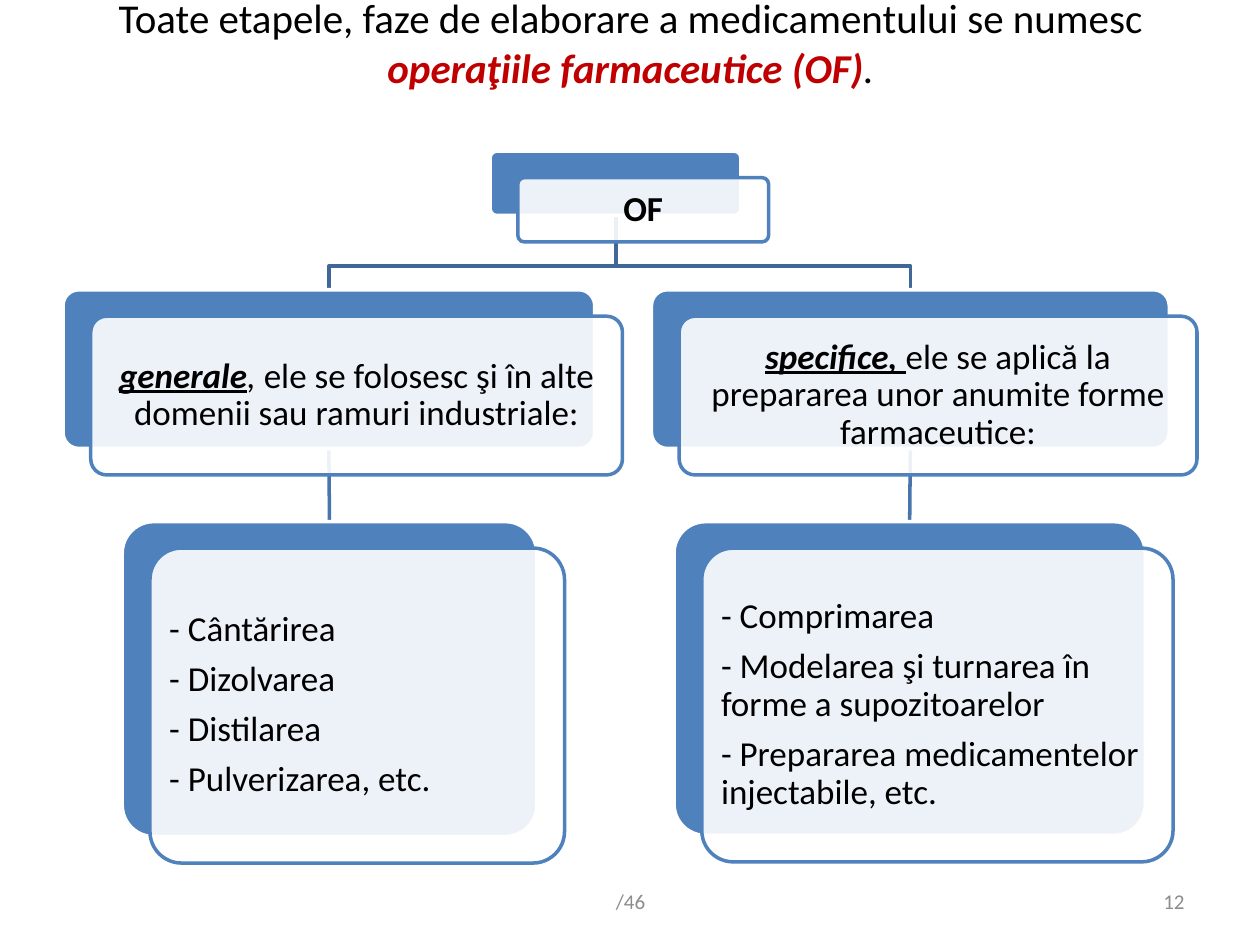
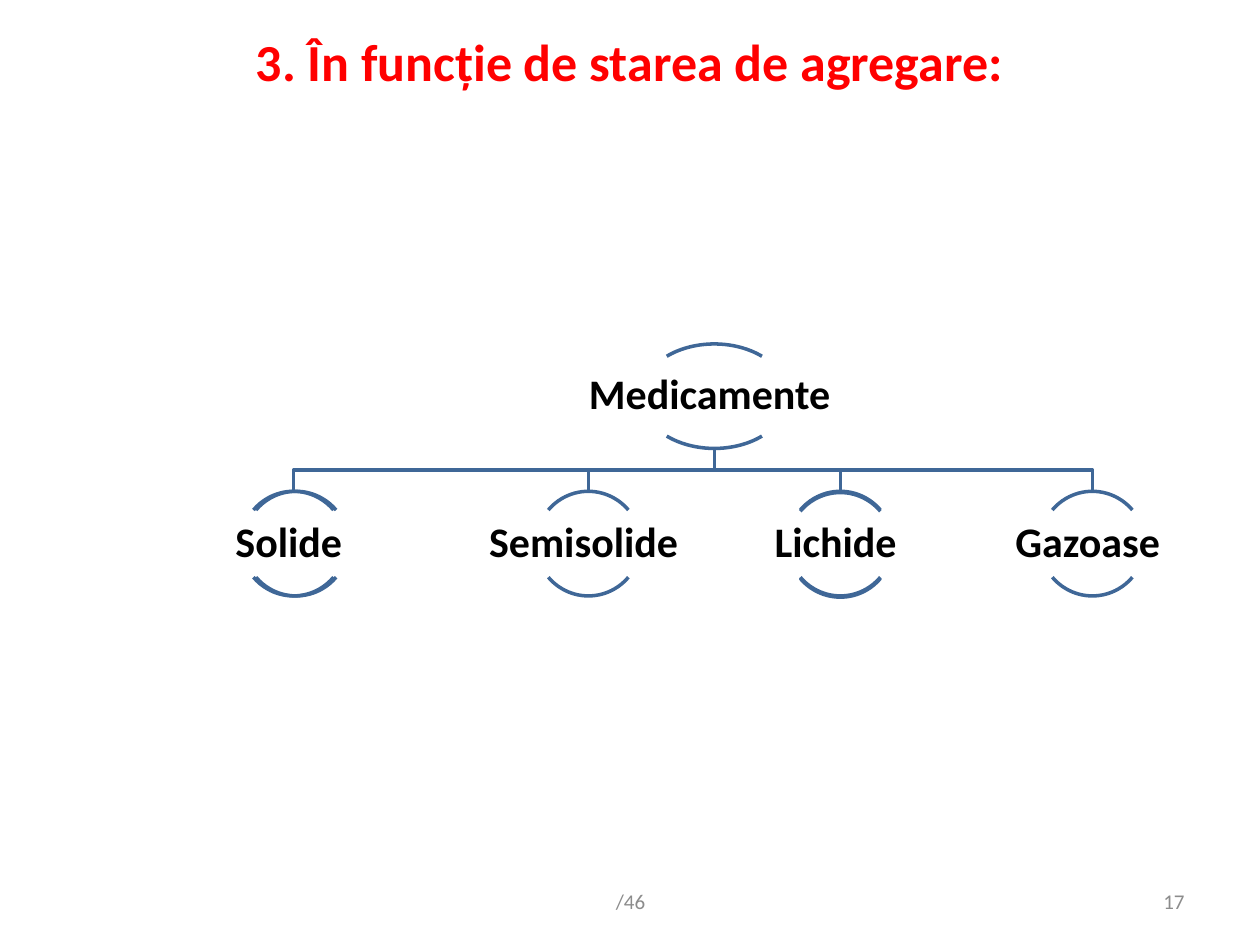
"""Build two slides on pharmaceutical operations and states of aggregation."""
from dataclasses import dataclass

from lxml.etree import SubElement
from pptx import Presentation
from pptx.dml.color import RGBColor
from pptx.enum.shapes import MSO_CONNECTOR, MSO_SHAPE
from pptx.enum.text import MSO_ANCHOR, MSO_AUTO_SIZE, PP_ALIGN
from pptx.oxml.ns import qn
from pptx.util import Inches, Pt


@dataclass(frozen=True)
class Theme:
    """Colours, font and type sizes of the deck."""
    font: str = "Calibri"
    ink: str = "000000"
    white: str = "FFFFFF"
    blue: str = "4F81BD"
    branch: str = "3F6797"
    link: str = "4875AC"
    accent: str = "C00000"
    heading: str = "FF0000"
    muted: str = "8C8C8C"
    statement_size: float = 23.4
    heading_size: float = 29.7
    card_size: float = 20
    node_size: float = 24
    footer_size: float = 12
    line_width: float = 2


class SlideBuilder:
    """Hold the theme and the current slide, and draw each kind of element."""

    def __init__(self, deck, theme):
        self.deck = deck
        self.theme = theme
        self.page = None

    def start_page(self, number):
        self.page = self.deck.slides.add_slide(self.deck.slide_layouts[5])
        self.label((7.17, 6.95, 2.33, 0.4), number, PP_ALIGN.RIGHT)
        self.label((3.42, 6.95, 3.17, 0.4), "/46", PP_ALIGN.CENTER)

    def set_text(self, box, paras, size, align, inset=None, color=None, spacing=None):
        frame = box.text_frame
        settings = {"word_wrap": True, "auto_size": MSO_AUTO_SIZE.NONE,
                    "vertical_anchor": MSO_ANCHOR.MIDDLE}
        if inset is not None:
            for side in ("left", "top", "right", "bottom"):
                settings[f"margin_{side}"] = Inches(inset)
        for name, value in settings.items():
            setattr(frame, name, value)
        for index, spans in enumerate(paras):
            para = frame.add_paragraph() if index else frame.paragraphs[0]
            for name, value in {"alignment": align, **(spacing or {})}.items():
                setattr(para, name, value)
            for text, style in spans:
                if text == "\v":
                    para.add_line_break()
                    continue
                span = para.add_run()
                span.text = text
                values = {"name": self.theme.font, "size": Pt(size), "bold": False, **style}
                tint = values.pop("tint", color or self.theme.ink)
                for name, value in values.items():
                    setattr(span.font, name, value)
                span.font.color.rgb = RGBColor.from_string(tint)

    def title(self, place, spans, size):
        box = self.page.shapes.title
        for name, value in zip(("left", "top", "width", "height"), place):
            setattr(box, name, Inches(value))
        self.set_text(box, [spans], size, PP_ALIGN.CENTER)

    def label(self, place, text, align):
        box = self.page.shapes.add_textbox(*map(Inches, place))
        self.set_text(box, [[(text, {})]], self.theme.footer_size, align,
                      color=self.theme.muted)

    def outline(self, shape, color):
        shape.line.color.rgb = RGBColor.from_string(color)
        shape.line.width = Pt(self.theme.line_width)

    def shape(self, kind, place, adjustments, fill, line):
        box = self.page.shapes.add_shape(kind, *map(Inches, place))
        box.shadow.inherit = False
        for index, value in enumerate(adjustments):
            box.adjustments[index] = value
        if fill:
            box.fill.solid()
            box.fill.fore_color.rgb = RGBColor.from_string(fill)
        else:
            box.fill.background()
        self.outline(box, line)
        return box

    def card(self, place, paras, align=PP_ALIGN.CENTER):
        left, top, width, height = place
        theme = self.theme
        back = self.shape(MSO_SHAPE.ROUNDED_RECTANGLE, place, [0.1], theme.blue, theme.white)
        front = self.shape(MSO_SHAPE.ROUNDED_RECTANGLE, (left + 0.22, top + 0.21, width, height),
                           [0.1], theme.white, theme.blue)
        color = front._element.spPr.find(qn("a:solidFill")).find(qn("a:srgbClr"))
        SubElement(color, qn("a:alpha"), val="90000")
        self.set_text(front, paras, theme.card_size, align, inset=0.08,
                      spacing={"line_spacing": 0.9, "space_after": Pt(7)})
        return back

    def branch(self, start, bend, end):
        points = [start, (start[0], bend), (end[0], bend), end]
        points = [tuple(map(Inches, point)) for point in points]
        builder = self.page.shapes.build_freeform(*points[0])
        builder.add_line_segments(points[1:], close=False)
        line = builder.convert_to_shape()
        line.shadow.inherit = False
        line.fill.background()
        self.outline(line, self.theme.branch)

    def link(self, upper, lower):
        line = self.page.shapes.add_connector(MSO_CONNECTOR.STRAIGHT, 0, 0, 0, 0)
        line.begin_connect(upper, 2)
        line.end_connect(lower, 0)
        self.outline(line, self.theme.link)
        SubElement(line._element.spPr, qn("a:effectLst"))
        self.page.shapes._spTree.insert(2, line._element)

    def arcs(self, center, top, width):
        for angles in ([132, 192], [24, 84]):
            self.shape(MSO_SHAPE.ARC, (center - width / 2, top, width, 0.83), angles,
                       None, self.theme.branch)

    def node(self, center, top, width, text, text_width):
        self.arcs(center, top, width)
        box = self.page.shapes.add_textbox(Inches(center - text_width / 2), Inches(top + 0.15),
                                           Inches(text_width), Inches(0.53))
        self.set_text(box, [[(text, {"bold": True})]], self.theme.node_size, PP_ALIGN.CENTER,
                      inset=0.02, spacing={"line_spacing": 0.9})


def draw_operations(builder):
    theme = builder.theme
    strong = {"bold": True, "italic": True}
    keyword = {**strong, "underline": True}
    groups = [
        ((0.5, 2.3, 4.22, 1.26),
         [("generale", keyword), (", ", {"italic": True}),
          ("ele se folosesc şi în alte domenii sau ramuri industriale:", {})],
         (0.97, 4.14, 3.29, 2.5),
         ["- Cântărirea", "- Dizolvarea", "- Distilarea", "- Pulverizarea, etc."]),
        ((5.17, 2.3, 4.11, 1.26),
         [("specifice, ", keyword),
          ("ele se aplică la prepararea unor anumite forme farmaceutice:", {})],
         (5.35, 4.14, 3.74, 2.49),
         ["- Comprimarea", "- Modelarea şi turnarea în forme a supozitoarelor",
          "- Prepararea medicamentelor injectabile, etc."]),
    ]
    builder.start_page("12")
    builder.title((0.2, -0.09, 9.61, 0.85), [
        ("Toate etapele, faze de elaborare a medicamentului se numesc", {}), ("\v", {}),
        ("operaţiile farmaceutice (OF)", {**strong, "tint": theme.accent}),
        (".", {"italic": True})], theme.statement_size)
    for place, *_ in groups:
        builder.branch((4.89, 1.72), 2.11, (place[0] + place[2] / 2, 2.3))
    builder.card((3.89, 1.2, 1.99, 0.51), [[("OF", {"bold": True})]])
    for group_place, group_spans, list_place, items in groups:
        group = builder.card(group_place, [group_spans])
        details = builder.card(list_place, [[(item, {})] for item in items], PP_ALIGN.LEFT)
        builder.link(group, details)


def draw_states(builder):
    theme = builder.theme
    root = 5.67
    states = [("Solide ", 2.33), ("Semisolide ", 4.67), ("Lichide ", 6.67), ("Gazoase ", 8.67)]
    builder.start_page("17")
    builder.title((0.5, 0.25, 9, 0.46), [
        ("3. În funcție de starea de agregare:", {"bold": True, "tint": theme.heading})],
        theme.heading_size)
    for _, center in states:
        builder.branch((root, 3.55), 3.73, (center, 3.9))
    builder.node(root, 2.73, 1.17, "Medicamente ", 2.34)
    for text, center in states:
        builder.node(center, 3.9, 0.83, text, 1.65)
    builder.arcs(2.35, 3.9, 0.83)
    builder.arcs(6.67, 3.91, 0.83)


def main():
    deck = Presentation()
    deck.slide_width, deck.slide_height = Inches(10), Inches(7.5)
    builder = SlideBuilder(deck, Theme())
    draw_operations(builder)
    draw_states(builder)
    deck.save("out.pptx")


if __name__ == "__main__":
    main()
